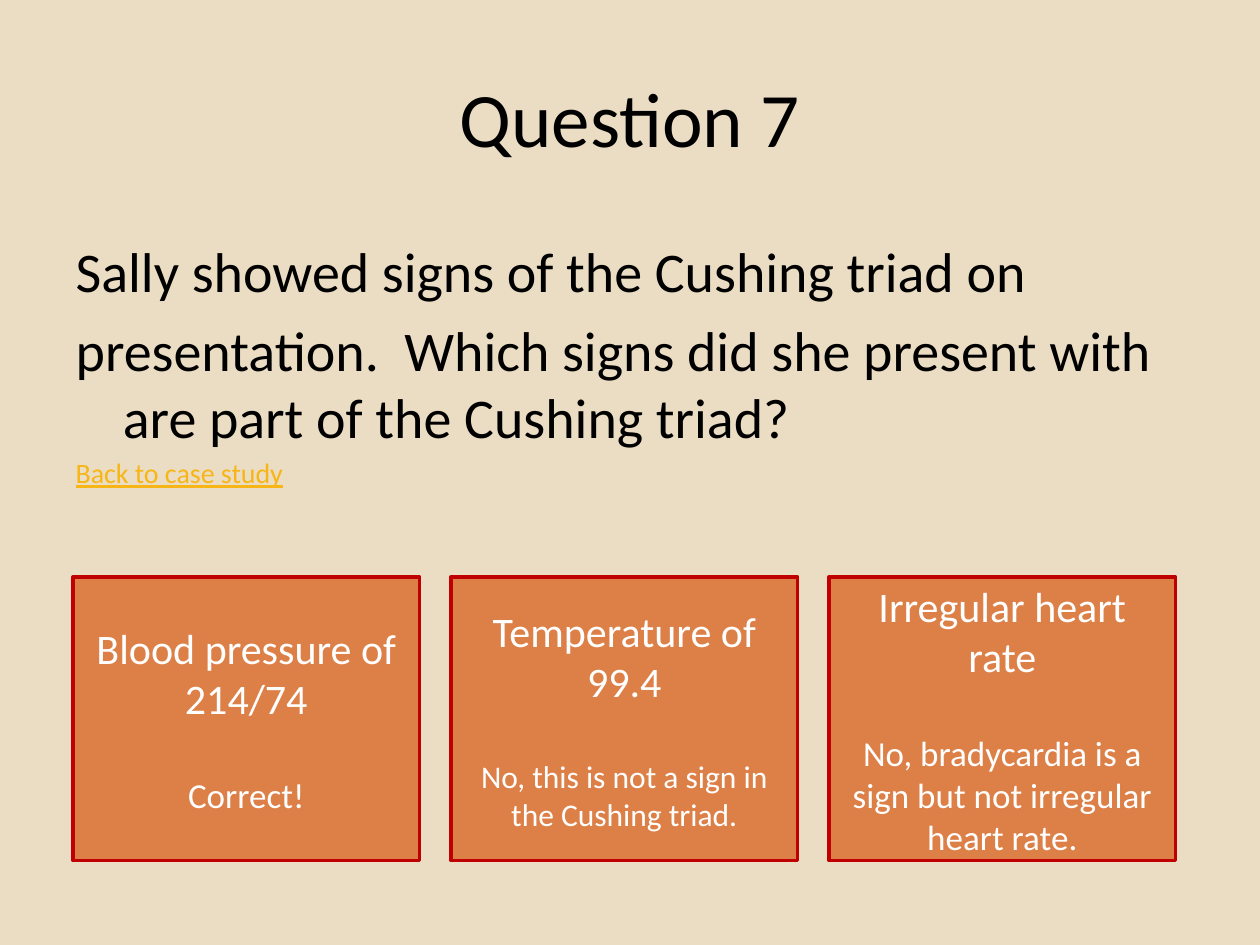
"""Build the quiz slide on the signs of the Cushing triad."""
from dataclasses import dataclass

from lxml import etree
from pptx import Presentation
from pptx import util as u
from pptx.dml.color import RGBColor
from pptx.enum import shapes, text
from pptx.oxml.ns import qn

SAND = RGBColor(0xEB, 0xDD, 0xC3)
ORANGE = RGBColor(0xDD, 0x80, 0x47)
RED = RGBColor(0xC0, 0x00, 0x00)
GOLD = RGBColor(0xF7, 0xB6, 0x15)
BLACK = RGBColor(0x00, 0x00, 0x00)
WHITE = RGBColor(0xFF, 0xFF, 0xFF)

CARD_LEFT, CARD_TOP, CARD_STEP = 0.58, 4.58, 3
CARD_WIDTH, CARD_HEIGHT = 2.75, 2.25


@dataclass
class Answer:
    choice: str
    feedback: str
    feedback_size: int


ANSWERS = [
    Answer("Blood pressure of 214/74", "Correct!", 20),
    Answer("Temperature of 99.4", "No, this is not a sign in the Cushing triad.", 18),
    Answer("Irregular heart rate",
           "No, bradycardia is a sign but not irregular heart rate.", 20),
]
QUESTION = [
    ("Sally showed signs of the Cushing triad on", 32, BLACK, False),
    ("presentation.  Which signs did she present with are part of the Cushing triad?",
     32, BLACK, False),
    ("Back to case study", 16, GOLD, True),
]


def apply(target, values: dict) -> None:
    """Set each attribute of the target from a dict of values."""
    for name, value in values.items():
        setattr(target, name, value)


def place(holder, left: float, top: float, width: float, height: float) -> None:
    """Move and size a placeholder, in inches."""
    apply(holder, {"left": u.Inches(left), "top": u.Inches(top),
                   "width": u.Inches(width), "height": u.Inches(height)})


def write(paragraph, words: str, size: int, color: RGBColor, underline: bool = False) -> None:
    """Add one formatted run to a paragraph."""
    run = paragraph.add_run()
    run.text = words
    apply(run.font, {"name": "Calibri", "size": u.Pt(size), "underline": underline})
    run.font.color.rgb = color


def draw_answer(slide, answer: Answer, column: int) -> None:
    """Draw one answer card in its column."""
    card = slide.shapes.add_shape(
        shapes.MSO_SHAPE.RECTANGLE,
        u.Inches(CARD_LEFT + column * CARD_STEP), u.Inches(CARD_TOP),
        u.Inches(CARD_WIDTH), u.Inches(CARD_HEIGHT))
    card.shadow.inherit = False
    card.fill.solid()
    card.fill.fore_color.rgb = ORANGE
    card.line.color.rgb = RED
    card.line.width = u.Pt(2)
    frame = card.text_frame
    apply(frame, {"word_wrap": True, "vertical_anchor": text.MSO_ANCHOR.MIDDLE})
    choice, feedback = frame.paragraphs[0], frame.add_paragraph()
    for paragraph in (choice, feedback):
        paragraph.alignment = text.PP_ALIGN.CENTER
    feedback.space_before = u.Pt(29)
    write(choice, answer.choice, 24, WHITE)
    write(feedback, answer.feedback, answer.feedback_size, WHITE)


def draw_question(body) -> None:
    """Fill the body placeholder with the question, without bullets."""
    place(body, 0.5, 1.83, 9, 3.08)
    frame = body.text_frame
    frame.auto_size = text.MSO_AUTO_SIZE.NONE
    for index, (words, size, color, underline) in enumerate(QUESTION):
        paragraph = frame.add_paragraph() if index else frame.paragraphs[0]
        etree.SubElement(paragraph._p.get_or_add_pPr(), qn("a:buNone"))
        write(paragraph, words, size, color, underline)


def main() -> None:
    """Build and save the slide."""
    deck = Presentation()
    apply(deck, {"slide_width": u.Inches(10), "slide_height": u.Inches(7.5)})
    slide = deck.slides.add_slide(deck.slide_layouts[1])
    slide.background.fill.solid()
    slide.background.fill.fore_color.rgb = SAND
    title = slide.shapes.title
    place(title, 0.5, 0.3, 9, 1.25)
    write(title.text_frame.paragraphs[0], "Question 7", 44, BLACK)
    for column, answer in enumerate(ANSWERS):
        draw_answer(slide, answer, column)
    draw_question(slide.placeholders[1])
    deck.save("out.pptx")


if __name__ == "__main__":
    main()
